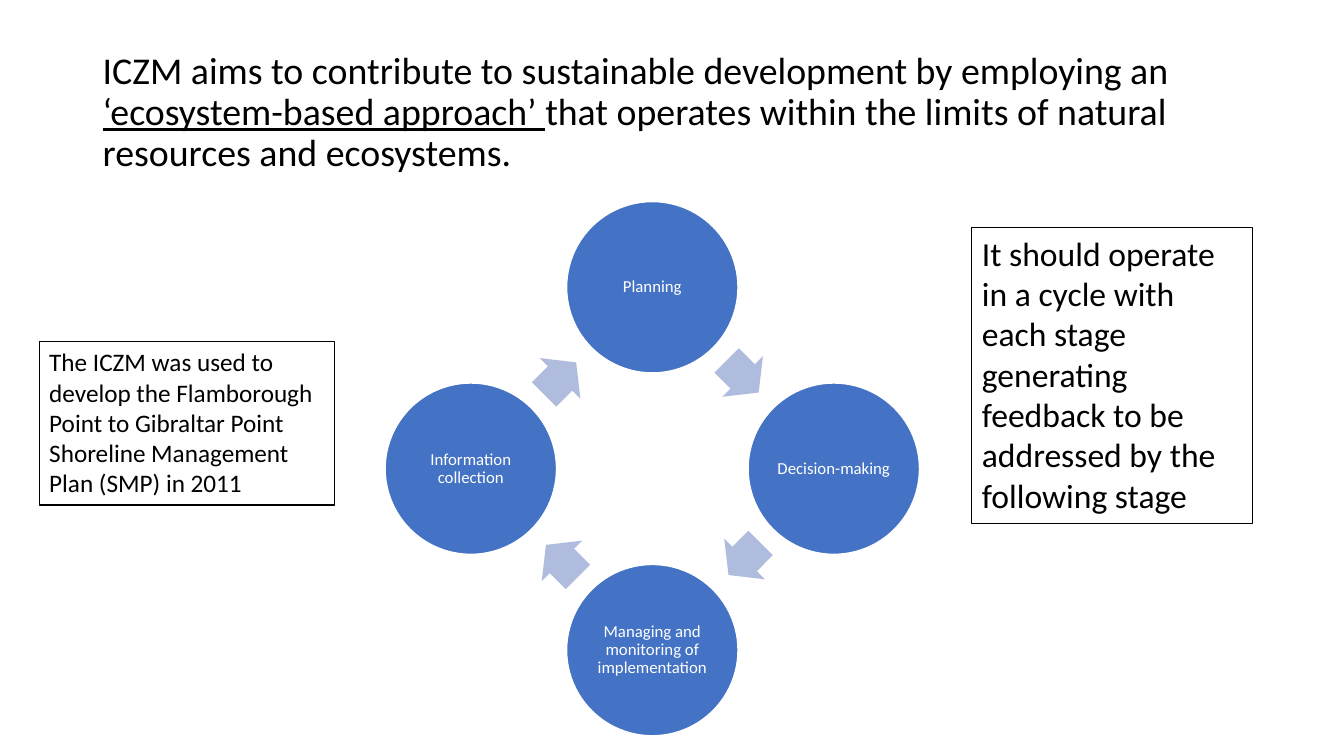
from math import cos, radians, sin

from pptx import Presentation
from pptx.dml.color import RGBColor
from pptx.enum.shapes import MSO_SHAPE
from pptx.enum.text import MSO_ANCHOR, PP_ALIGN
from pptx.util import Inches, Pt

BLACK = RGBColor(0x00, 0x00, 0x00)
WHITE = RGBColor(0xFF, 0xFF, 0xFF)
BLUE = RGBColor(0x44, 0x72, 0xC4)
PALE_BLUE = RGBColor(0xB0, 0xBC, 0xDE)

CENTRE_X, CENTRE_Y = 6.47, 4.65
RADIUS = 1.8
CIRCLE = 1.7
ARROW_RADIUS, ARROW_ANGLE = 1.28, 44.4
ARROW_LENGTH, ARROW_WIDTH = 0.45, 0.57


def style_font(paragraph, size, color):
    paragraph.font.name = "Calibri"
    paragraph.font.size = Pt(size)
    paragraph.font.color.rgb = color


def add_cycle_shape(page, kind, angle, radius, width, height, color):
    """Centre a filled shape on the cycle at a clockwise angle from the right."""
    x = CENTRE_X + radius * cos(radians(angle))
    y = CENTRE_Y + radius * sin(radians(angle))
    shape = page.shapes.add_shape(kind, Inches(x - width / 2), Inches(y - height / 2),
                                  Inches(width), Inches(height))
    shape.shadow.inherit = False
    shape.fill.solid()
    shape.fill.fore_color.rgb = color
    return shape


deck = Presentation()
deck.slide_width = Inches(13.33)
deck.slide_height = Inches(7.5)
page = deck.slides.add_slide(deck.slide_layouts[6])

# Title
title = page.shapes.add_textbox(Inches(0.92), Inches(0.4), Inches(11.5), Inches(1.45))
title.text_frame.word_wrap = True
title.text_frame.vertical_anchor = MSO_ANCHOR.MIDDLE
para = title.text_frame.paragraphs[0]
para.line_spacing = 0.9
style_font(para, 27, BLACK)
for words, underlined in [
    ("ICZM aims to contribute to sustainable development by employing an ", False),
    ("‘ecosystem-based approach’ ", True),
    ("that operates within the limits of natural resources and ecosystems.", False),
]:
    span = para.add_run()
    span.text = words
    span.font.underline = underlined

# Cycle of stages, clockwise from the top
stages = ["Planning", "Decision-making", "Managing and monitoring of implementation",
          "Information collection"]
for index, stage in enumerate(stages):
    angle = 90 * index - 90
    circle = add_cycle_shape(page, MSO_SHAPE.OVAL, angle, RADIUS, CIRCLE, CIRCLE, BLUE)
    circle.line.color.rgb = WHITE
    circle.line.width = Pt(1)
    frame = circle.text_frame
    frame.word_wrap = True
    frame.vertical_anchor = MSO_ANCHOR.MIDDLE
    frame.margin_left = frame.margin_right = Inches(0.02)
    frame.margin_top = frame.margin_bottom = Inches(0.02)
    para = frame.paragraphs[0]
    para.text = stage
    para.alignment = PP_ALIGN.CENTER
    para.line_spacing = 0.9
    style_font(para, 12, WHITE)

    arrow = add_cycle_shape(page, MSO_SHAPE.RIGHT_ARROW, angle + ARROW_ANGLE, ARROW_RADIUS,
                            ARROW_LENGTH, ARROW_WIDTH, PALE_BLUE)
    arrow.line.fill.background()
    arrow.adjustments[0] = 0.6
    arrow.adjustments[1] = 0.5
    arrow.rotation = 45 + 90 * index

# Framed notes
notes = [
    (9.64, 2.26, 2.78, 2.93, 24,
     "It should operate in a cycle with each stage generating feedback to be addressed "
     "by the following stage"),
    (0.39, 3.39, 2.93, 1.62, 18,
     "The ICZM was used to develop the Flamborough Point to Gibraltar Point Shoreline "
     "Management Plan (SMP) in 2011"),
]
for left, top, width, height, size, words in notes:
    box = page.shapes.add_textbox(Inches(left), Inches(top), Inches(width), Inches(height))
    box.line.color.rgb = BLACK
    box.line.width = Pt(0.75)
    box.text_frame.word_wrap = True
    para = box.text_frame.paragraphs[0]
    para.text = words
    style_font(para, size, BLACK)

deck.save("out.pptx")
